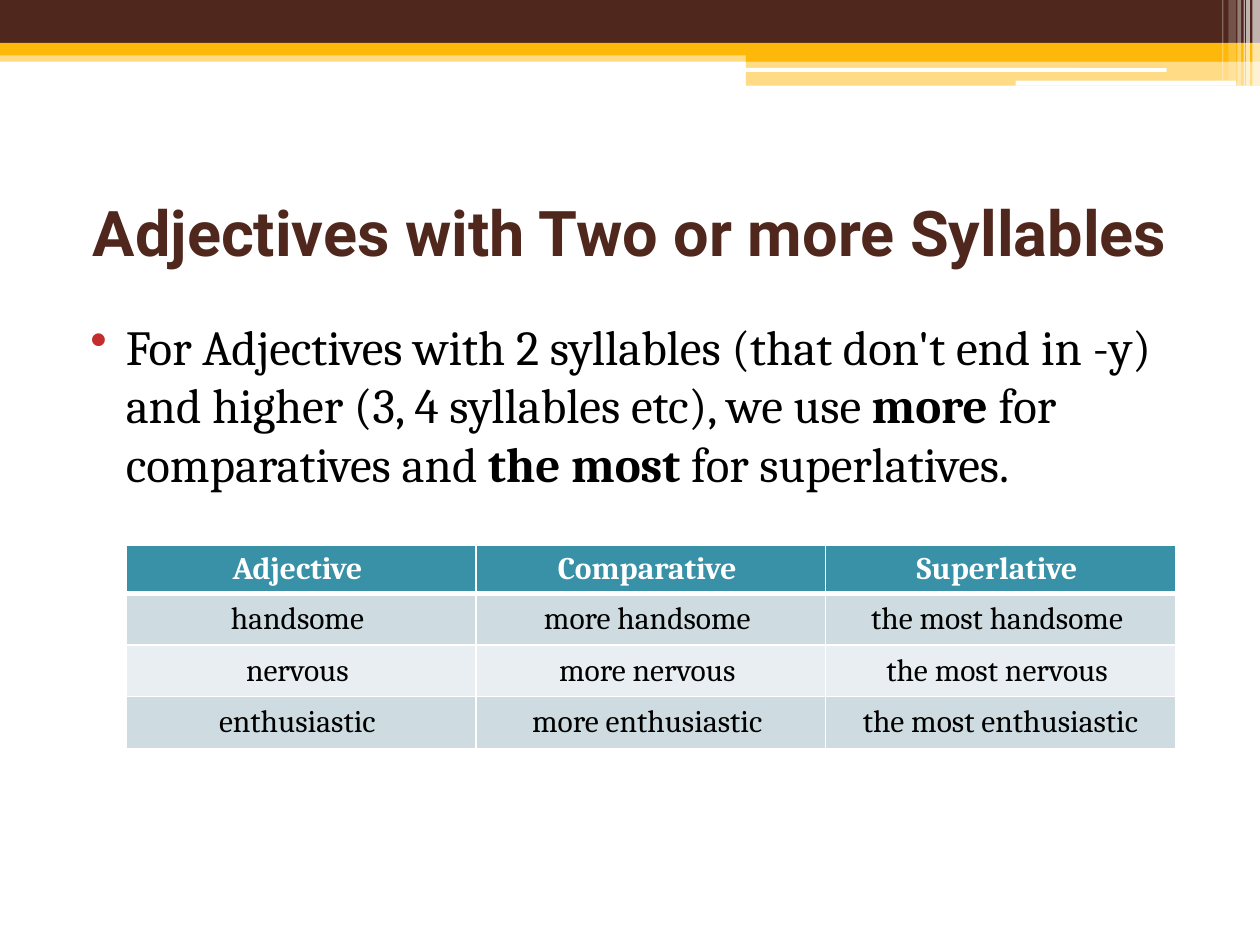
import dataclasses
import typing

import lxml.etree
import pptx
import pptx.dml.color
import pptx.enum.shapes
import pptx.enum.text
import pptx.oxml.ns
import pptx.util

Inches = pptx.util.Inches
Kind = pptx.enum.shapes.MSO_SHAPE
Align = pptx.enum.text.PP_ALIGN
Anchor = pptx.enum.text.MSO_ANCHOR


@dataclasses.dataclass(frozen=True)
class Theme:
    brown: str = "4F271C"
    gold: str = "FEB80A"
    white: str = "FFFFFF"
    black: str = "000000"
    red: str = "C32D2E"
    teal: str = "3891A7"
    dark: str = "CEDCE1"
    light: str = "E8EEF1"
    head: str = "Roboto"
    body: str = "Cambria"
    large: int = 36
    mid: int = 28
    small: int = 18


THEME = Theme()


class Bar(typing.NamedTuple):
    left: float
    top: float
    width: float
    height: float
    color: str
    alpha: int = 100
    kind: typing.Any = Kind.RECTANGLE


BARS = [
    Bar(0, 0.4, 10, 0.09, THEME.gold, 50),
    Bar(0, 0, 10, 0.34, THEME.brown),
    Bar(0, 0.34, 10, 0.1, THEME.gold),
    Bar(5.92, 0.39, 4.08, 0.1, THEME.gold),
    Bar(5.92, 0.48, 4.08, 0.2, THEME.gold, 50),
    Bar(5.91, 0.54, 3.35, 0.03, THEME.white, kind=Kind.ROUNDED_RECTANGLE),
    Bar(8.06, 0.64, 1.75, 0.04, THEME.white, kind=Kind.ROUNDED_RECTANGLE),
] + [
    Bar(left, 0, width, height, THEME.white, alpha)
    for left, width, height, alpha in [
        (9.94, 0.06, 0.68, 65),
        (9.89, 0.03, 0.68, 65),
        (9.87, 0.01, 0.68, 60),
        (9.82, 0.03, 0.68, 40),
        (9.75, 0.06, 0.64, 20),
        (9.7, 0.01, 0.64, 30),
    ]
]

TITLE = "Adjectives with Two or more Syllables"
RULE = [
    ("For Adjectives with 2 syllables (that don't end in -y) "
     "and higher (3, 4 syllables etc), we use ", False),
    ("more", True),
    (" for comparatives and ", False),
    ("the most ", True),
    ("for superlatives.", False),
]
ROWS = [
    ("Adjective ", "Comparative ", "Superlative "),
    ("handsome ", "more handsome ", "the most handsome "),
    ("nervous ", "more nervous ", "the most nervous "),
    ("enthusiastic ", "more enthusiastic ", "the most enthusiastic"),
]


def rgb(color: str) -> pptx.dml.color.RGBColor:
    return pptx.dml.color.RGBColor.from_string(color)


def sub(node, tag: str, **attrs: str):
    """Append a child such as a:ln to an XML node."""
    return lxml.etree.SubElement(node, pptx.oxml.ns.qn(tag), attrs)


def apply(item, values: dict) -> None:
    for name, value in values.items():
        setattr(item, name, value)


def paint(item, color: str) -> None:
    item.fill.solid()
    item.fill.fore_color.rgb = rgb(color)


def add_run(para, text: str, face: str, size: int, color: str, bold: bool) -> None:
    run = para.add_run()
    run.text = text
    apply(run.font, {"name": face, "size": pptx.util.Pt(size), "bold": bold})
    run.font.color.rgb = rgb(color)


def add_bar(slide, bar: Bar) -> None:
    shape = slide.shapes.add_shape(bar.kind, *map(Inches, bar[:4]))
    shape.shadow.inherit = False
    shape.line.fill.background()
    paint(shape, bar.color)
    if bar.alpha < 100:
        tone = shape.fill._xPr.find(".//" + pptx.oxml.ns.qn("a:srgbClr"))
        sub(tone, "a:alpha", val=str(bar.alpha * 1000))


def add_box(slide, left: float, top: float, width: float, height: float, anchor):
    """Add a wrapped text box and return its first paragraph."""
    box = slide.shapes.add_textbox(*map(Inches, (left, top, width, height)))
    apply(box.text_frame, {"word_wrap": True, "vertical_anchor": anchor})
    return box.text_frame.paragraphs[0]


def add_mark(para) -> None:
    """Give a paragraph a hanging red bullet."""
    para.space_before = pptx.util.Pt(3)
    props = para._p.get_or_add_pPr()
    props.set("marL", str(Inches(0.4)))
    props.set("indent", str(Inches(-0.28)))
    sub(sub(props, "a:buClr"), "a:srgbClr", val=THEME.red)
    sub(props, "a:buChar", char="•")


def add_edges(cell, base: int) -> None:
    """Draw white cell borders, with the bottom one base points wide."""
    props = cell._tc.get_or_add_tcPr()
    for side, width in {"L": 1, "R": 1, "T": 1, "B": base}.items():
        line = sub(props, f"a:ln{side}", w=str(pptx.util.Pt(width)))
        sub(sub(line, "a:solidFill"), "a:srgbClr", val=THEME.white)


def add_grid(slide) -> None:
    frame = slide.shapes.add_table(
        len(ROWS), len(ROWS[0]), Inches(1), Inches(4.33), Inches(8.33), Inches(1.61)
    )
    for i, words in enumerate(ROWS):
        top = i == 0
        frame.table.rows[i].height = Inches(0.38 if top else 0.41)
        fill = THEME.teal if top else THEME.dark if i % 2 else THEME.light
        color = THEME.white if top else THEME.black
        for j, text in enumerate(words):
            cell = frame.table.cell(i, j)
            apply(cell, {
                "vertical_anchor": Anchor.MIDDLE,
                "margin_top": Inches(0.04),
                "margin_bottom": Inches(0.04),
            })
            add_edges(cell, 3 if top else 1)
            paint(cell, fill)
            para = cell.text_frame.paragraphs[0]
            para.alignment = Align.CENTER
            add_run(para, text, THEME.body, THEME.small, color, top)


def main() -> None:
    deck = pptx.Presentation()
    apply(deck, {"slide_width": Inches(10), "slide_height": Inches(7.5)})
    slide = deck.slides.add_slide(deck.slide_layouts[6])
    for bar in BARS:
        add_bar(slide, bar)
    title = add_box(slide, 0.5, 1.25, 9, 1.17, Anchor.MIDDLE)
    title.alignment = Align.CENTER
    add_run(title, TITLE, THEME.head, THEME.large, THEME.brown, True)
    rule = add_box(slide, 0.5, 2.46, 9, 4.73, Anchor.TOP)
    add_mark(rule)
    for text, bold in RULE:
        add_run(rule, text, THEME.body, THEME.mid, THEME.black, bold)
    add_grid(slide)
    deck.save("out.pptx")


if __name__ == "__main__":
    main()
